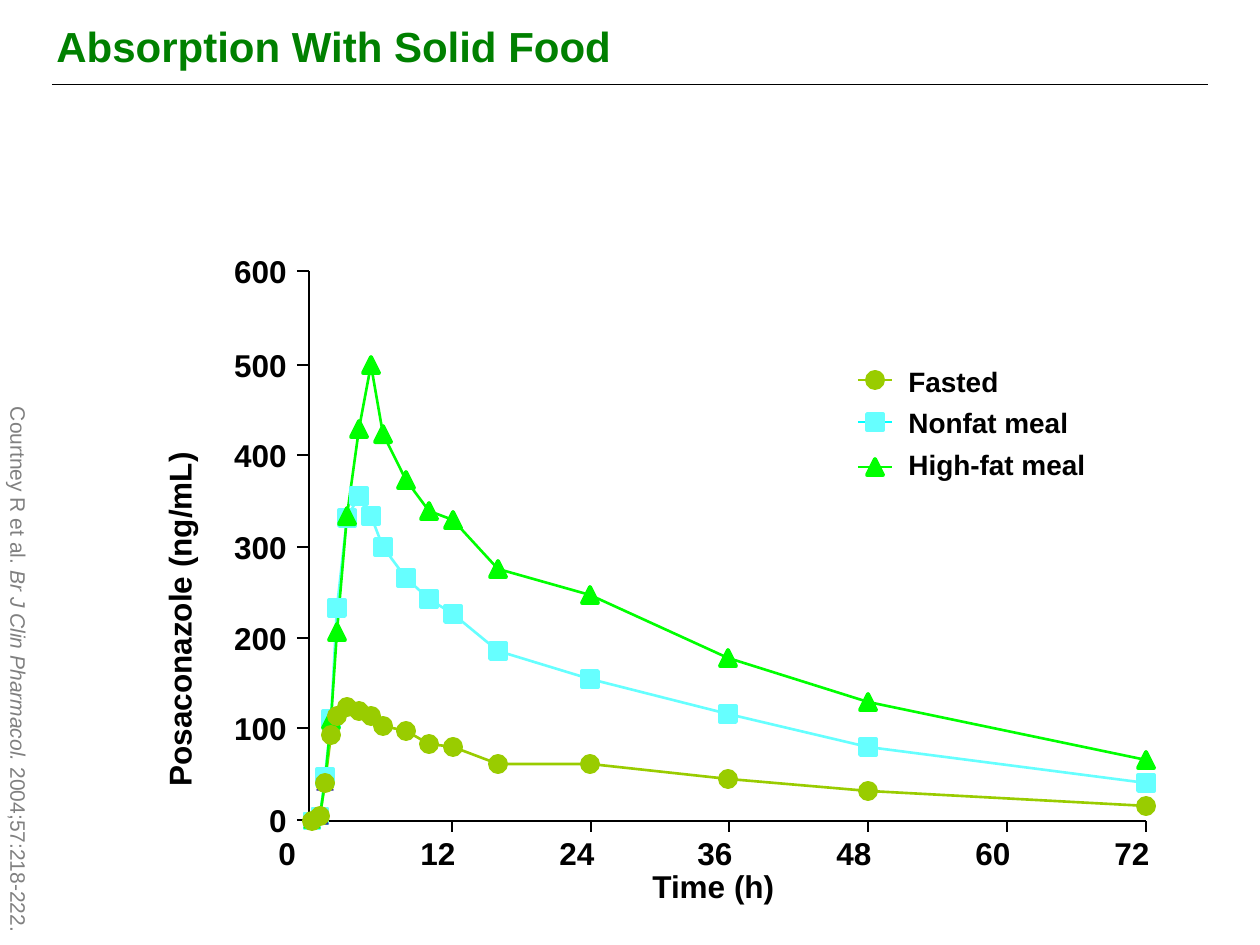
import pptx
import pptx.dml.color
import pptx.enum.shapes
import pptx.enum.text
import pptx.oxml
import pptx.oxml.ns
import pptx.util

RGB = pptx.dml.color.RGBColor
BLACK = RGB(0x00, 0x00, 0x00)
GREEN = RGB(0x00, 0x80, 0x00)
GRAY = RGB(0x80, 0x80, 0x80)
OLIVE = RGB(0x99, 0xCC, 0x00)
CYAN = RGB(0x66, 0xFF, 0xFF)
AQUA = RGB(0x00, 0xFF, 0xFF)
LIME = RGB(0x00, 0xFF, 0x00)
NAVY = RGB(0x33, 0x33, 0x99)

FONT = "Arial"
Pt = pptx.util.Pt
KIND = pptx.enum.shapes.MSO_SHAPE
RIGHT = pptx.enum.text.PP_ALIGN.RIGHT

LEFT, BASE, TOP, END = 309, 821, 271, 1146
LEVELS = [820, 728, 638, 547, 455, 365, 271]
TIMES = [312, 320, 325, 331, 337, 347, 359, 371, 383, 406, 429, 453, 498,
         590, 728, 868, 1146]
FASTED = [821, 816, 783, 735, 716, 707, 711, 716, 726, 731, 744, 747, 764,
          764, 779, 791, 806]
NONFAT = [821, 816, 777, 719, 608, 518, 496, 516, 547, 578, 599, 614, 651,
          679, 714, 747, 783]
HIGHFAT = [820, 816, 782, 720, 632, 516, 429, 365, 434, 480, 511, 520, 569,
           595, 658, 702, 760]
# levels, colour, marker, number of thinly outlined markers
MEALS = [(FASTED, OLIVE, KIND.OVAL, 0),
         (NONFAT, CYAN, KIND.RECTANGLE, 2),
         (HIGHFAT, LIME, KIND.ISOSCELES_TRIANGLE, 3)]


def px(n):
    return pptx.util.Emu(round(n * 914400 / 126))


def text(slide, box, lines, size, color=BLACK, bold=True, turn=0, align=None,
         gap=0):
    """Add a text box; each line is a list of (words, italic) pairs."""
    shape = slide.shapes.add_textbox(*map(px, box))
    shape.rotation = turn
    frame = shape.text_frame
    frame.word_wrap = True
    for i, parts in enumerate(lines):
        para = frame.add_paragraph() if i else frame.paragraphs[0]
        para.alignment = align
        if i and gap:
            para.space_before = Pt(gap)
        for words, slant in parts:
            run = para.add_run()
            run.text = words
            font = run.font
            font.name, font.size, font.bold = FONT, Pt(size), bold
            font.italic = slant
            font.color.rgb = color
    return frame


def label(slide, box, words, **more):
    text(slide, box, [[(words, False)]], 18, **more)


def line(slide, x1, y1, x2, y2, color=BLACK, width=1.5):
    bar = slide.shapes.add_connector(
        pptx.enum.shapes.MSO_CONNECTOR.STRAIGHT, *map(px, (x1, y1, x2, y2)))
    bar.line.color.rgb = color
    bar.line.width = Pt(width)
    bar._element.find(pptx.oxml.ns.qn("p:spPr")).append(
        pptx.oxml.parse_xml("<a:effectLst %s/>" % pptx.oxml.ns.nsdecls("a")))


def curve(slide, points, color):
    """Draw an open line through the points."""
    dots = [(px(x), px(y)) for x, y in points]
    pen = slide.shapes.build_freeform(*dots[0])
    pen.add_line_segments(dots[1:], close=False)
    shape = pen.convert_to_shape()
    shape.shadow.inherit = False
    shape.fill.background()
    shape.line.color.rgb = color
    shape.line.width = Pt(1.5)


def mark(slide, kind, x, y, color, width=2.25):
    """Put a marker with its centre at x, y."""
    shape = slide.shapes.add_shape(kind, px(x - 8), px(y - 8), px(16), px(16))
    shape.shadow.inherit = False
    shape.fill.solid()
    shape.fill.fore_color.rgb = color
    shape.line.color.rgb = color
    shape.line.width = Pt(width)


def axes(slide):
    curve(slide, [(LEFT, TOP), (LEFT, BASE), (END, BASE)], BLACK)
    for i, y in enumerate(LEVELS):
        line(slide, LEFT - 12, y, LEFT, y)
        label(slide, (213, y - 25, 86, 50), str(100 * i), align=RIGHT)
    label(slide, (266, 828, 86, 50), "0")
    for i in range(6):
        step = round(138.7 * i)
        line(slide, 452 + step, BASE, 452 + step, BASE + 11)
        label(slide, (408 + step, 828, 86, 50), str(12 * (i + 1)))
    label(slide, (-71, 524, 500, 50), "Posaconazole (ng/mL)", turn=270)
    label(slide, (640, 861, 199, 50), "Time (h)")


def curves(slide):
    for levels, color, _, _ in MEALS:
        curve(slide, list(zip(TIMES, levels)), color)
    for levels, color, kind, thin in MEALS[1:] + MEALS[:1]:
        for i, (x, y) in enumerate(zip(TIMES, levels)):
            dark = levels is HIGHFAT and i in (1, 2)
            mark(slide, kind, x, y, NAVY if dark else color,
                 0.75 if i < thin else 2.25)


def legend(slide):
    names = ["Fasted", "Nonfat meal", "High-fat meal"]
    text(slide, (896, 358, 243, 131), [[(name, False)] for name in names],
         16, gap=4.6)
    for (_, color, kind, _), y, tint in zip(
            MEALS, (380, 422, 467), (OLIVE, AQUA, LIME)):
        line(slide, 858, y, 892, y, tint)
        mark(slide, kind, 875, y, color)


def main():
    deck = pptx.Presentation()
    deck.slide_width, deck.slide_height = px(1260), px(945)
    slide = deck.slides.add_slide(deck.slide_layouts[6])
    line(slide, 52, 84, 1208, 84, width=0.25)
    title = text(slide, (44, 20, 1206, 106),
                 [[("Absorption With Solid Food", False)]], 24, GREEN)
    title.margin_top = title.margin_bottom = 0
    axes(slide)
    curves(slide)
    legend(slide)
    text(slide, (-262, 645, 561, 38),
         [[("Courtney R et al. ", False), ("Br J Clin Pharmacol. ", True),
           ("2004;57:218-222.", False)]],
         12, GRAY, bold=False, turn=90, align=RIGHT)
    deck.save("out.pptx")


if __name__ == "__main__":
    main()
